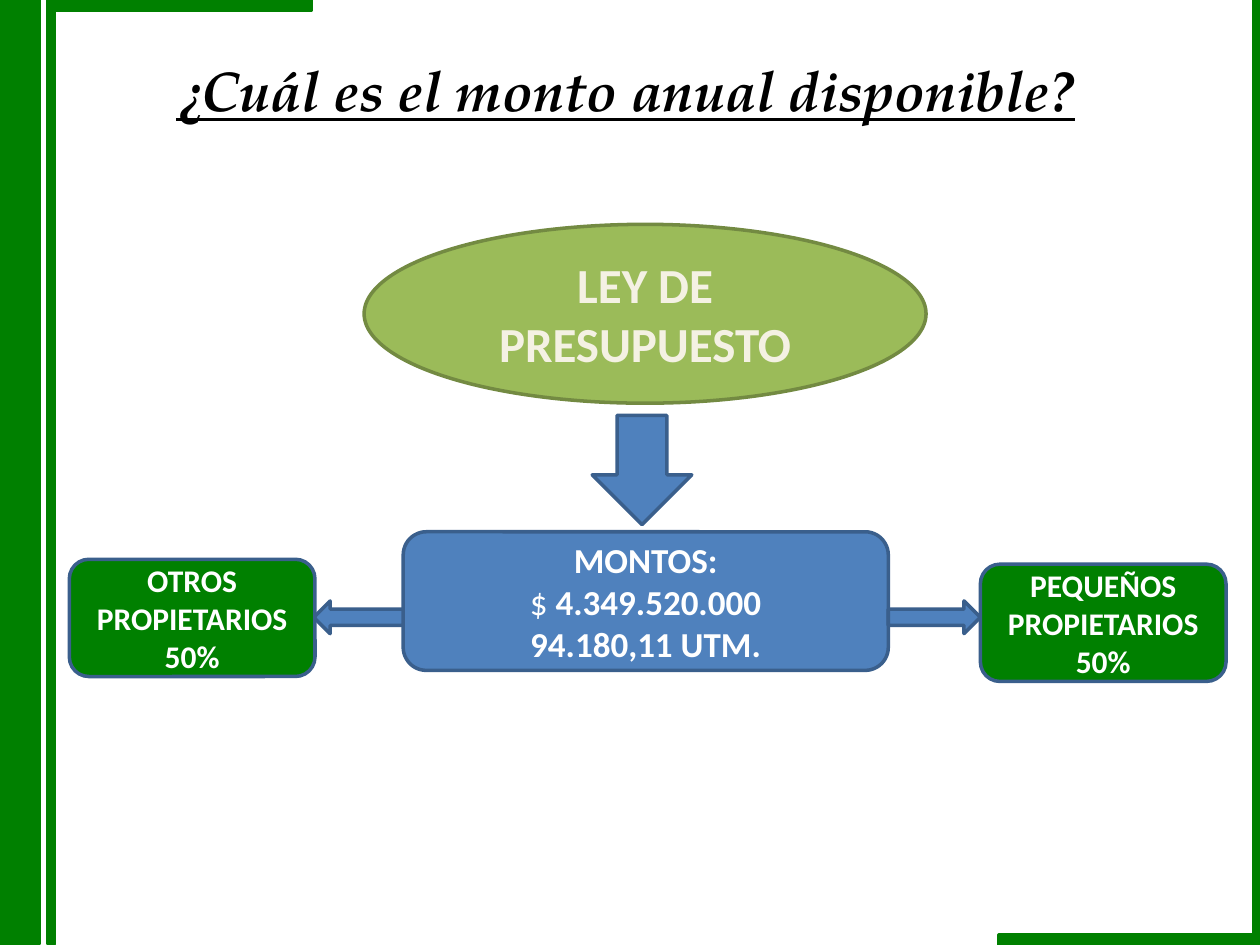
from pptx import Presentation
from pptx.dml.color import RGBColor
from pptx.enum.shapes import MSO_SHAPE
from pptx.enum.text import MSO_ANCHOR, PP_ALIGN
from pptx.util import Pt

GREEN, BLUE, BLUE_EDGE = "008000", "4F81BD", "3A5F8C"
LIME, LIME_EDGE, CREAM, WHITE, BLACK = "9BBB59", "738A42", "F4F1E3", "FFFFFF", "000000"


def color(hex_string):
    return RGBColor.from_string(hex_string)


class SlideBuilder:
    body_font = "Calibri"
    title_font = "TeX Gyre Pagella"
    line_width = 2

    def __init__(self, slide):
        self.slide = slide

    def format_runs(self, paragraph, font_name, size, font_color):
        for run in paragraph.runs:
            run.font.name = font_name
            run.font.size = Pt(size)
            run.font.bold = True
            run.font.color.rgb = color(font_color)

    def title(self, text, left, top, width, height):
        title = self.slide.shapes.title
        title.left, title.top, title.width, title.height = map(Pt, (left, top, width, height))
        text_frame = title.text_frame
        text_frame.text = text
        text_frame.word_wrap = True
        text_frame.vertical_anchor = MSO_ANCHOR.TOP
        paragraph = text_frame.paragraphs[0]
        paragraph.alignment = PP_ALIGN.LEFT
        self.format_runs(paragraph, self.title_font, 32, BLACK)
        for run in paragraph.runs:
            run.font.italic = run.font.underline = True

    def shape(self, kind, left, top, width, height, fill, edge, rotation=0):
        shape = self.slide.shapes.add_shape(kind, *map(Pt, (left, top, width, height)))
        shape.shadow.inherit = False
        shape.fill.solid()
        shape.fill.fore_color.rgb = color(fill)
        shape.line.color.rgb = color(edge)
        shape.line.width = Pt(self.line_width)
        shape.rotation = rotation
        return shape

    def bar(self, left, top, width, height):
        self.shape(MSO_SHAPE.RECTANGLE, left, top, width, height, GREEN, GREEN)

    def arrow(self, kind, left, top, width, height, rotation=0):
        self.shape(kind, left, top, width, height, BLUE, BLUE_EDGE, rotation)

    def label(self, kind, box, fill, edge, text, size, font_color=WHITE):
        shape = self.shape(kind, *box, fill, edge)
        text_frame = shape.text_frame
        text_frame.text = text
        text_frame.word_wrap = True
        text_frame.vertical_anchor = MSO_ANCHOR.MIDDLE
        for paragraph in text_frame.paragraphs:
            paragraph.alignment = PP_ALIGN.CENTER
            self.format_runs(paragraph, self.body_font, size, font_color)
        return shape


def main():
    presentation = Presentation()
    presentation.slide_width, presentation.slide_height = Pt(720), Pt(540)
    builder = SlideBuilder(presentation.slides.add_slide(presentation.slide_layouts[5]))

    # Green frame
    builder.bar(0, 0, 22.3, 539.5)
    builder.bar(27.4, 0, 3.6, 539.5)
    builder.bar(716.4, 0, 3.6, 540)
    builder.bar(571, 534.2, 147, 5.8)
    builder.bar(31, 0, 147, 5.8)

    # Title
    builder.title("¿Cuál es el monto anual disponible?", 93.6, 28.1, 584, 46)

    # Budget law and its amounts
    builder.label(MSO_SHAPE.OVAL, (208.1, 128.2, 321.1, 102.2), LIME, LIME_EDGE,
                  "LEY DE PRESUPUESTO", 28, CREAM)
    amounts = builder.label(MSO_SHAPE.ROUNDED_RECTANGLE, (230.4, 303.9, 277.2, 79.2),
                            BLUE, BLUE_EDGE, "MONTOS:\n$ \n94.180,11 UTM.", 20)
    pesos = amounts.text_frame.paragraphs[1]
    pesos.add_run().text = "4.349.520.000"
    builder.format_runs(pesos, builder.body_font, 20, WHITE)
    pesos.runs[0].font.bold = False

    # Arrows
    builder.arrow(MSO_SHAPE.DOWN_ARROW, 338.4, 237.4, 56.9, 62.4)
    builder.arrow(MSO_SHAPE.RIGHT_ARROW, 507.6, 343.4, 52.6, 18.7)
    builder.arrow(MSO_SHAPE.RIGHT_ARROW, 179.3, 343.4, 51.1, 18.7, rotation=180)

    # Shares of each group of owners
    for left, top, text in ((560.2, 322.4, "PEQUEÑOS PROPIETARIOS 50%"),
                            (39.6, 319.6, "OTROS PROPIETARIOS\n50%")):
        builder.label(MSO_SHAPE.ROUNDED_RECTANGLE, (left, top, 140.4, 67),
                      GREEN, BLUE_EDGE, text, 18)

    presentation.save("out.pptx")


if __name__ == "__main__":
    main()
